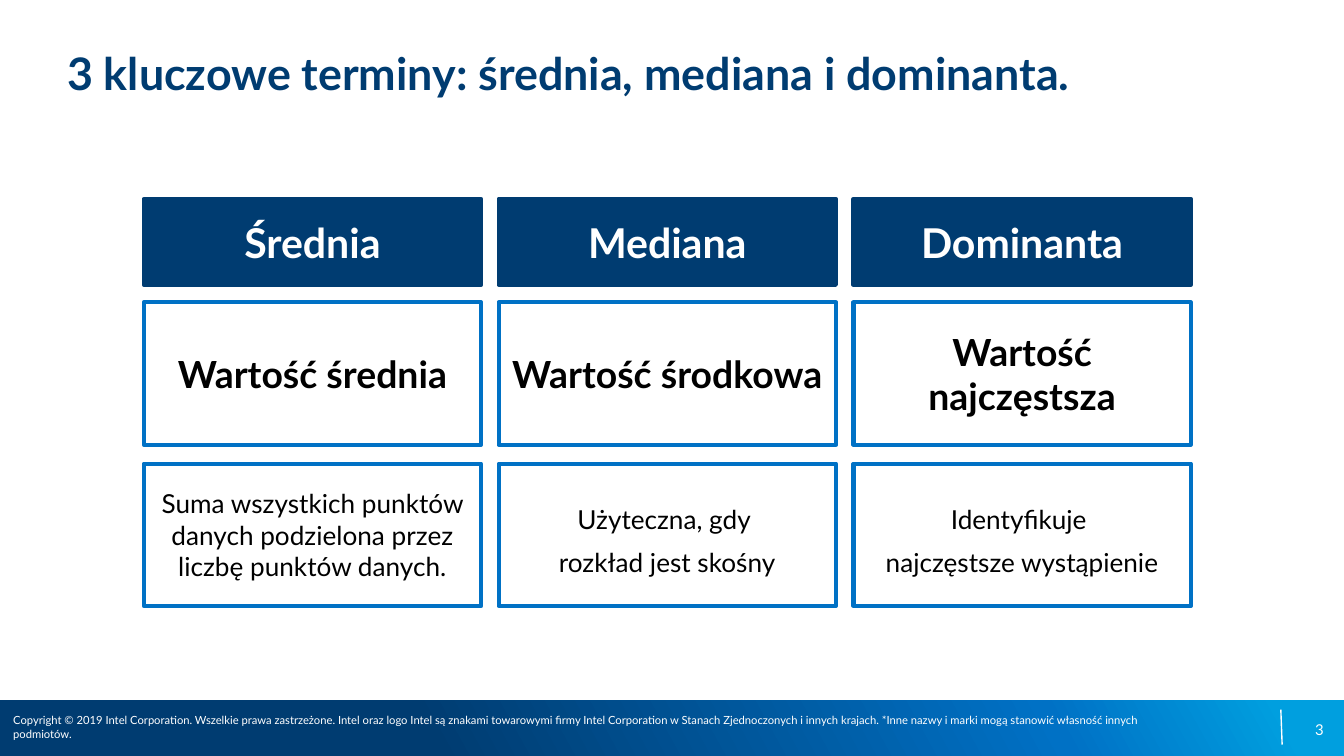
from copy import deepcopy

from pptx import Presentation
from pptx.dml.color import RGBColor
from pptx.enum.shapes import MSO_CONNECTOR, MSO_SHAPE
from pptx.enum.text import MSO_ANCHOR as Anchor, PP_ALIGN as Align
from pptx.oxml.ns import qn
from pptx.util import Inches, Pt
from lxml.etree import SubElement

NAVY = RGBColor(0x00, 0x3C, 0x71)
BLUE = RGBColor(0x00, 0x71, 0xC5)
CYAN = RGBColor(0x00, 0x9F, 0xDF)
WHITE = RGBColor(0xFF, 0xFF, 0xFF)
BLACK = RGBColor(0x00, 0x00, 0x00)

COPYRIGHT = (
    "Copyright © 2019 Intel Corporation. Wszelkie prawa zastrzeżone. "
    "Intel oraz logo Intel są znakami towarowymi firmy Intel Corporation "
    "w Stanach Zjednoczonych i innych krajach. "
    "*Inne nazwy i marki mogą stanowić własność innych podmiotów."
)


def write(shape, lines, size, color, bold=False, align=Align.LEFT,
          anchor=Anchor.MIDDLE, margins=(0, 0), spacing=None):
    frame = shape.text_frame
    frame.word_wrap = True
    frame.vertical_anchor = anchor
    frame.margin_left = frame.margin_right = Inches(margins[0])
    frame.margin_top = frame.margin_bottom = Inches(margins[1])
    frame.text = "\n".join(lines)
    for paragraph in frame.paragraphs:
        paragraph.alignment = align
        if spacing:
            paragraph.line_spacing = spacing
        paragraph.font.name = "Lato"
        paragraph.font.size = Pt(size)
        paragraph.font.bold = bold
        paragraph.font.color.rgb = color


presentation = Presentation()
presentation.slide_width = Inches(10)
presentation.slide_height = presentation.slide_width * 9 // 16
slide = presentation.slides.add_slide(presentation.slide_layouts[6])
shapes = slide.shapes

footer_top = Inches(5.21)
footer = shapes.add_shape(
    MSO_SHAPE.RECTANGLE, 0, footer_top, presentation.slide_width,
    presentation.slide_height - footer_top)
footer.shadow.inherit = False
footer.line.fill.background()
footer.fill.gradient()
footer.fill.gradient_angle = 29
stop_list = footer.fill._fill._gradFill.find(qn("a:gsLst"))
stop_list.append(deepcopy(stop_list[-1]))
for stop, position, color in zip(
        footer.fill.gradient_stops, (0.32, 0.78, 0.95), (NAVY, BLUE, CYAN)):
    stop.position = position
    stop.color.rgb = color

divider = shapes.add_connector(
    MSO_CONNECTOR.STRAIGHT, Inches(9.53), Inches(5.28), Inches(9.54), Inches(5.54))
divider.line.color.rgb = WHITE
divider.line.width = Pt(0.75)
SubElement(divider._element.spPr, qn("a:effectLst"))

page_number = shapes.add_textbox(Inches(7.52), Inches(5.28), Inches(2.33), Inches(0.3))
write(page_number, ["3"], 8, WHITE, align=Align.RIGHT)

title = shapes.add_textbox(Inches(0.5), Inches(0.34), Inches(9), Inches(0.95))
write(title, ["3 kluczowe terminy: średnia, mediana i dominanta."], 24, NAVY,
      bold=True, anchor=Anchor.TOP)

copyright_line = shapes.add_textbox(0, Inches(5.31), Inches(8.86), Inches(0.2))
write(copyright_line, [COPYRIGHT], 6, WHITE, margins=(0.1, 0.05))

LEFT, COLUMN_STEP, CARD_WIDTH = 1.07, 2.64, 2.51
rows = [
    (1.48, 0.64, NAVY, NAVY, WHITE, 22, True,
     [["Średnia"], ["Mediana"], ["Dominanta"]]),
    (2.25, 1.06, WHITE, BLUE, BLACK, 20, True,
     [["Wartość średnia"], ["Wartość środkowa"], ["Wartość najczęstsza"]]),
    (3.45, 1.06, WHITE, BLUE, BLACK, 14, False,
     [["Suma wszystkich punktów danych podzielona przez liczbę punktów danych."],
      ["Użyteczna, gdy ", "rozkład jest skośny"],
      ["Identyfikuje ", "najczęstsze wystąpienie"]]),
]
for top, height, fill, outline, text_color, size, bold, texts in rows:
    for column, lines in enumerate(texts):
        card = shapes.add_shape(
            MSO_SHAPE.RECTANGLE, Inches(LEFT + column * COLUMN_STEP), Inches(top),
            Inches(CARD_WIDTH), Inches(height))
        card.shadow.inherit = False
        card.fill.solid()
        card.fill.fore_color.rgb = fill
        card.line.color.rgb = outline
        card.line.width = Pt(2.25)
        write(card, lines, size, text_color, bold, Align.CENTER,
              margins=(0.1, 0.1), spacing=1.38 if len(lines) > 1 else None)

presentation.save("out.pptx")
